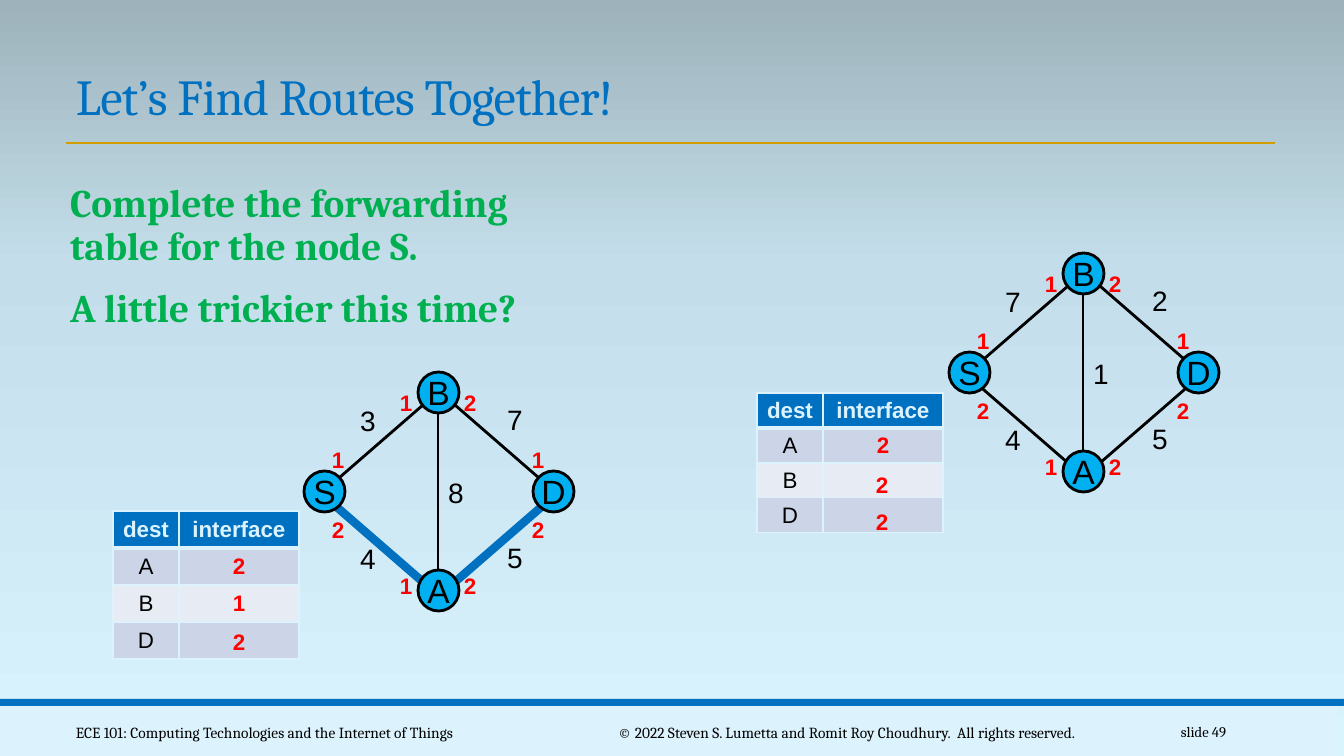
from copy import deepcopy

from lxml.etree import SubElement
from pptx import Presentation
from pptx.dml.color import RGBColor
from pptx.enum.shapes import MSO_CONNECTOR, MSO_SHAPE
from pptx.enum.text import MSO_ANCHOR, PP_ALIGN
from pptx.oxml.ns import qn
from pptx.util import Pt

PX = 914400 / 100.8
COLORS = {
    "black": "000000", "red": "FF0000", "green": "00B050", "blue": "0070C0",
    "node": "00B0F0", "gold": "D09E00", "pale": "DCF3FD",
    "odd row": "CCD5E8", "even row": "E7EBF4",
    "sky low": "DAF4FF", "sky middle": "C3DEEA", "sky high": "9DB2BA",
}
BACKGROUND = [(0, "sky low"), (65, "sky middle"), (100, "sky high")]

TITLE = "Let’s Find Routes Together!"
TASKS = ["Complete the forwarding\vtable for the node S.",
         "A little trickier this time?"]
FOOTERS = [
    ("slide 49", (1092, 712, 144, 40), 10.5, PP_ALIGN.RIGHT),
    ("ECE 101: Computing Technologies and the Internet of Things",
     (66, 712, 462, 40), 11, PP_ALIGN.LEFT),
    ("© 2022 Steven S. Lumetta and Romit Roy Choudhury.  All rights reserved.",
     (550, 712, 594, 40), 11, PP_ALIGN.CENTER),
]

# Positions inside a graph are relative to its top left corner.
NODE_SIZE = 41
NODES = {"S": (0, 99), "D": (229, 99), "A": (114, 198), "B": (114, 0)}
EDGES = {
    "SB": ((20, 119), (134, 20)), "DB": ((250, 119), (136, 20)),
    "SA": ((20, 124), (134, 223)), "DA": ((250, 124), (136, 223)),
    "AB": ((134, 222), (134, 23)),
}
WEIGHT_PLACES = {"SB": (46, 27), "DB": (193, 26), "SA": (46, 165),
                 "DA": (193, 164), "AB": (134, 99)}
INTERFACES = [
    ("1", 18, 69), ("2", 18, 139), ("1", 218, 69), ("2", 218, 139),
    ("1", 86, 12), ("2", 150, 12), ("1", 86, 195), ("2", 150, 195),
]
HEADER = ("dest", "interface")
COLUMN_WIDTHS = (66, 120)
EXERCISES = [
    {"graph": (949, 253), "route": (),
     "weights": {"SB": 7, "DB": 2, "SA": 4, "DA": 5, "AB": 1},
     "table": (757, 393), "row height": 35,
     "rows": [HEADER, ("A", "2"), ("B", ""), ("D", "")],
     "answers": [(866, 466), (866, 503)]},
    {"graph": (304, 372), "route": ("SA", "DA"),
     "weights": {"SB": 3, "DB": 7, "SA": 4, "DA": 5, "AB": 8},
     "table": (113, 511), "row height": 37,
     "rows": [HEADER, ("A", "2"), ("B", "1"), ("D", "")],
     "answers": [(223, 623)]},
]


def px(*lengths):
    return [round(length * PX) for length in lengths]


def color(name):
    return RGBColor.from_string(COLORS[name])


def style(paragraph, size, color_name, font="Arial", bold=False,
          align=PP_ALIGN.LEFT):
    paragraph.alignment = align
    for run in paragraph.runs:
        run.font.name = font
        run.font.size = Pt(size)
        run.font.bold = bold
        run.font.color.rgb = color(color_name)


def add_text(shapes, text, box, *look, wrap=False, anchor=MSO_ANCHOR.TOP, **more):
    frame = shapes.add_textbox(*px(*box)).text_frame
    frame.word_wrap = wrap
    frame.vertical_anchor = anchor
    frame.text = text
    for paragraph in frame.paragraphs:
        style(paragraph, *look, **more)
    return frame


def add_line(shapes, start, end, color_name, width=2):
    line = shapes.add_connector(MSO_CONNECTOR.STRAIGHT, *px(*start, *end))
    line.line.color.rgb = color(color_name)
    line.line.width = Pt(width)
    SubElement(line._element.spPr, qn("a:effectLst"))


def add_filled(shapes, kind, box, fill):
    shape = shapes.add_shape(kind, *px(*box))
    shape.shadow.inherit = False
    shape.fill.solid()
    shape.fill.fore_color.rgb = color(fill)
    shape.line.fill.background()
    return shape


def add_interface(shapes, number, x, y):
    add_text(shapes, number, (x, y, 33, 37), 16, "red", bold=True)


def add_graph(slide, origin, weights, route):
    shapes = slide.shapes.add_group_shape().shapes

    def placed(point):
        return origin[0] + point[0], origin[1] + point[1]

    for name, (start, end) in EDGES.items():
        on_route = name in route
        add_line(shapes, placed(start), placed(end),
                 "blue" if on_route else "black", 6 if on_route else 2)
    for name, weight in weights.items():
        add_text(shapes, str(weight), (*placed(WEIGHT_PLACES[name]), 36, 44),
                 20, "black", align=PP_ALIGN.CENTER)
    for number, *place in INTERFACES:
        add_interface(shapes, number, *placed(place))
    for name, place in NODES.items():
        node = add_filled(shapes, MSO_SHAPE.OVAL,
                          (*placed(place), NODE_SIZE, NODE_SIZE), "node")
        node.line.color.rgb = color("black")
        node.line.width = Pt(2)
        frame = node.text_frame
        frame.margin_left = frame.margin_right = 0
        frame.margin_top = frame.margin_bottom = 0
        frame.vertical_anchor = MSO_ANCHOR.MIDDLE
        frame.text = name
        style(frame.paragraphs[0], 24, "black", align=PP_ALIGN.CENTER)


def add_borders(cell, bottom_width):
    properties = cell._tc.get_or_add_tcPr()
    for side, width in (("L", 1), ("R", 1), ("T", 1), ("B", bottom_width)):
        border = SubElement(properties, qn(f"a:ln{side}"), w=str(Pt(width)))
        fill = SubElement(border, qn("a:solidFill"))
        SubElement(fill, qn("a:srgbClr"), val=COLORS["pale"])


def add_forwarding_table(slide, place, rows, row_height):
    box = (*place, sum(COLUMN_WIDTHS), row_height * len(rows))
    table = slide.shapes.add_table(len(rows), len(HEADER), *px(*box)).table
    for column, width in zip(table.columns, px(*COLUMN_WIDTHS)):
        column.width = width
    for i, row in enumerate(rows):
        table.rows[i].height = px(row_height)[0]
        for j, text in enumerate(row):
            cell = table.cell(i, j)
            cell.margin_left = cell.margin_right = px(5)[0]
            cell.margin_top = cell.margin_bottom = 0
            cell.vertical_anchor = MSO_ANCHOR.MIDDLE
            add_borders(cell, 1 if i else 3)
            cell.fill.solid()
            cell.fill.fore_color.rgb = color(
                "blue" if i == 0 else "odd row" if i % 2 else "even row")
            cell.text = text
            style(cell.text_frame.paragraphs[0], 16,
                  "pale" if i == 0 else "red" if j else "black",
                  bold=i == 0 or j == 1, align=PP_ALIGN.CENTER)


def fill_background(slide):
    fill = slide.background.fill
    fill.gradient()
    fill.gradient_angle = 90
    stops = slide.element.find(".//" + qn("a:gsLst"))
    stops.append(deepcopy(stops[-1]))
    for stop, (position, name) in zip(fill.gradient_stops, BACKGROUND):
        stop.position = position / 100
        stop.color.rgb = color(name)


def main():
    presentation = Presentation()
    presentation.slide_width, presentation.slide_height = px(1344, 756)
    slide = presentation.slides.add_slide(presentation.slide_layouts[6])
    shapes = slide.shapes
    fill_background(slide)

    add_filled(shapes, MSO_SHAPE.RECTANGLE, (-6, 706, 1344, 50), "pale")
    add_filled(shapes, MSO_SHAPE.RECTANGLE, (0, 699, 1344, 7), "blue")
    add_line(shapes, (66, 143), (1275, 143), "gold")

    title = add_text(shapes, TITLE, (66, 59, 1210, 72), 36, "blue", "Cambria",
                     wrap=True, anchor=MSO_ANCHOR.BOTTOM).paragraphs[0]
    title.line_spacing = 0.85
    title.runs[0].font._element.set("spc", "-50")

    tasks = add_text(shapes, "\n".join(TASKS), (60, 179, 859, 468), 28, "green",
                     "Cambria", bold=True, wrap=True)
    tasks.margin_left, tasks.margin_right = px(10, 0)
    for i, paragraph in enumerate(tasks.paragraphs):
        paragraph.line_spacing = 0.9
        paragraph.space_before = Pt(12 if i else 0)
        paragraph.space_after = Pt(2)

    for text, box, size, align in FOOTERS:
        add_text(shapes, text, box, size, "black", "Cambria", wrap=True,
                 anchor=MSO_ANCHOR.MIDDLE, align=align)

    for exercise in EXERCISES:
        add_forwarding_table(slide, exercise["table"], exercise["rows"],
                             exercise["row height"])
        add_graph(slide, exercise["graph"], exercise["weights"], exercise["route"])
        for place in exercise["answers"]:
            add_interface(shapes, "2", *place)

    presentation.save("out.pptx")


if __name__ == "__main__":
    main()
